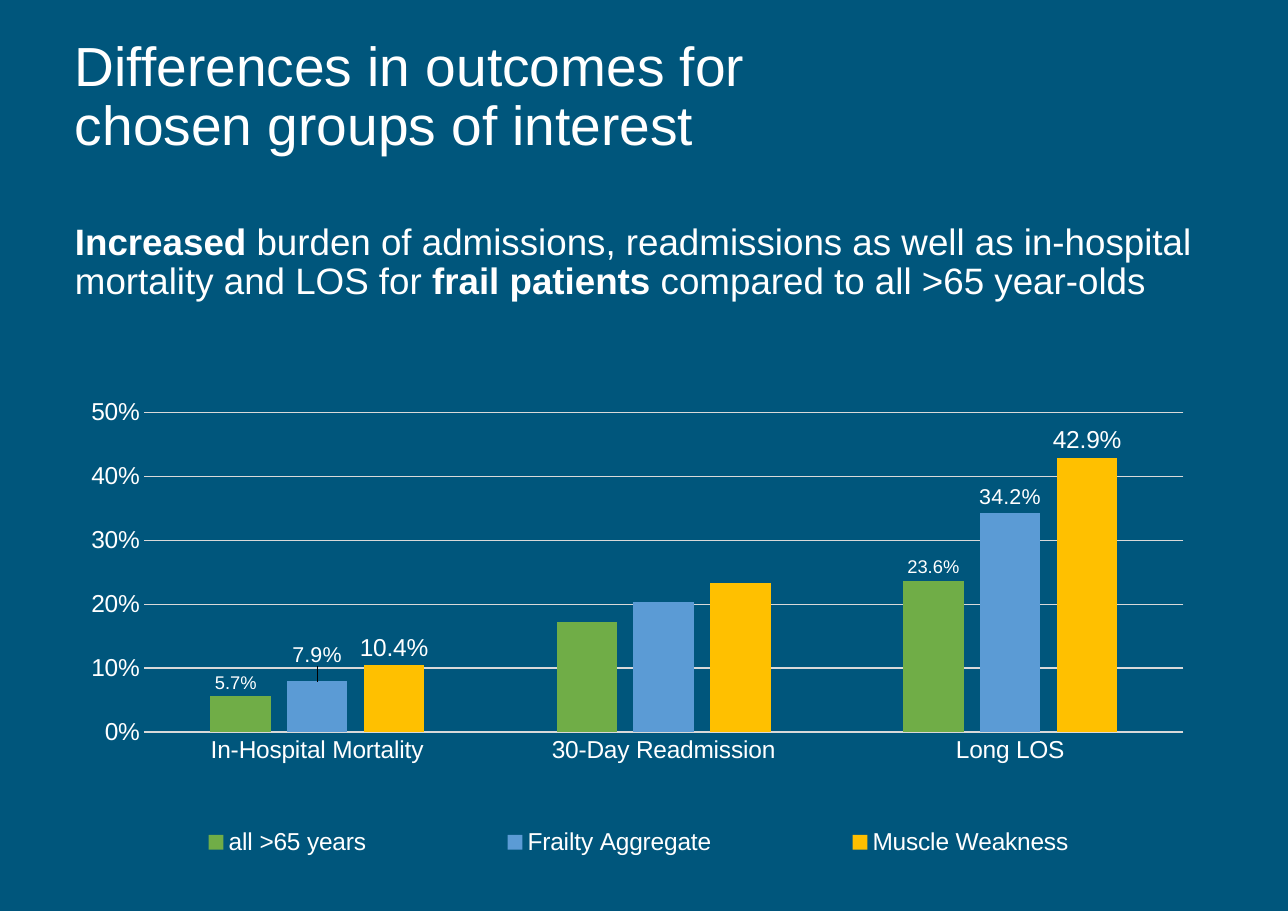
from copy import deepcopy

from lxml import etree
from pptx import Presentation
from pptx.chart.data import CategoryChartData
from pptx.dml.color import RGBColor
from pptx.enum import chart as ch, text as tx
from pptx.oxml import ns
from pptx.util import Pt

NAVY = RGBColor(0x00, 0x56, 0x7C)
WHITE = RGBColor(0xFF, 0xFF, 0xFF)
GREY = RGBColor(0xD9, 0xD9, 0xD9)
GREEN = RGBColor(0x70, 0xAD, 0x47)
BLUE = RGBColor(0x5B, 0x9B, 0xD5)
AMBER = RGBColor(0xFF, 0xC0, 0x00)
FONT = "Arial"

# Content: runs are (text, bold)
TITLE = [("Differences in outcomes for chosen groups of interest", False)]
MESSAGE = [
    ("Increased", True),
    (" burden of admissions, readmissions as well as in-hospital mortality and LOS for ", False),
    ("frail patients ", True),
    ("compared to all >65 year-olds", False),
]
OUTCOMES = ["In-Hospital Mortality", "30-Day Readmission", "Long LOS"]
# name, values, colour, label size, shift of the first label (share of chart)
GROUPS = [
    ("all >65 years", (0.057, 0.172, 0.236), GREEN, 12, (-0.004, 0.004)),
    ("Frailty Aggregate", (0.079, 0.203, 0.342), BLUE, 14, (0, -0.02)),
    ("Muscle Weakness", (0.104, 0.233, 0.429), AMBER, 16, None),
]
UNLABELLED = 1  # the readmission bars carry no value

# Places in points: left, top, width, height
PAGE = (841.68, 595.44)
TITLE_AT = (41.76, 21.6, 556.56, 76.32)
MESSAGE_AT = (41.76, 142.56, 757.44, 97.92)
CHART_AT = (41.76, 240.48, 747.36, 333.36)
# Places as shares of the chart
PLOT_AT = (0.07, 0.087, 0.909, 0.627)
LEGEND_AT = (0.01, 0.88, 0.985, 0.1)


def style_font(font, size):
    font.name, font.size = FONT, Pt(size)
    font.color.rgb = WHITE


def fill_placeholder(box, place, runs, size):
    box.left, box.top, box.width, box.height = map(Pt, place)
    frame = box.text_frame
    frame.word_wrap = True
    frame.auto_size = tx.MSO_AUTO_SIZE.NONE
    frame.vertical_anchor = tx.MSO_ANCHOR.TOP
    para = frame.paragraphs[0]
    props = para._p.get_or_add_pPr()
    props.set("marL", "0")
    props.set("indent", "0")
    etree.SubElement(props, ns.qn("a:buNone"))
    para.alignment = tx.PP_ALIGN.LEFT
    para.line_spacing = 0.9
    para.space_before = Pt(0)
    for words, bold in runs:
        span = para.add_run()
        span.text = words
        span.font.bold = bold
        style_font(span.font, size)


def chart_tag(parent, name, value=None):
    tag = etree.SubElement(parent, ns.qn("c:" + name))
    if value is not None:
        tag.set("val", str(value))
    return tag


def manual_layout(place, inner=False, absolute=True):
    layout = etree.Element(ns.qn("c:layout"))
    manual = chart_tag(layout, "manualLayout")
    if inner:
        chart_tag(manual, "layoutTarget", "inner")
    if absolute:
        chart_tag(manual, "xMode", "edge")
        chart_tag(manual, "yMode", "edge")
    for name, value in zip("xywh", place):
        chart_tag(manual, name, value)
    return layout


def replace_layout(parent, layout, position):
    for old in parent.findall(ns.qn("c:layout")):
        parent.remove(old)
    parent.insert(position, layout)


def label_series(series, size, shift):
    labels = series.data_labels
    labels.show_value = True
    labels.number_format, labels.number_format_is_linked = "0.0%", False
    labels.position = ch.XL_LABEL_POSITION.OUTSIDE_END
    style_font(labels.font, size)
    root = labels._element
    shared = [deepcopy(part) for part in root]
    hidden = etree.Element(ns.qn("c:dLbl"))
    chart_tag(hidden, "idx", UNLABELLED)
    chart_tag(hidden, "delete", 1)
    root.insert(0, hidden)
    if shift:
        moved = etree.Element(ns.qn("c:dLbl"))
        chart_tag(moved, "idx", 0)
        moved.append(manual_layout(shift, absolute=False))
        moved.extend(part for part in shared if part.tag != ns.qn("c:showLeaderLines"))
        root.insert(0, moved)


def add_outcome_chart(page):
    data = CategoryChartData(number_format="0.0%")
    data.categories = OUTCOMES
    for name, values, *_ in GROUPS:
        data.add_series(name, values)
    chart = page.shapes.add_chart(
        ch.XL_CHART_TYPE.COLUMN_CLUSTERED, *map(Pt, CHART_AT), data).chart
    chart.has_title = False
    style_font(chart.font, 16)

    # Columns and their values
    plot = chart.plots[0]
    plot.gap_width, plot.overlap = 219, -27
    plot.vary_by_categories = False
    for series, (_, _, colour, size, shift) in zip(plot.series, GROUPS):
        series.format.fill.solid()
        series.format.fill.fore_color.rgb = colour
        label_series(series, size, shift)

    # Axes
    scale = chart.value_axis
    scale.minimum_scale, scale.maximum_scale, scale.major_unit = 0, 0.5, 0.1
    scale.tick_labels.number_format = "0%"
    scale.tick_labels.number_format_is_linked = False
    scale.format.line.fill.background()
    scale.has_major_gridlines = True
    for axis in (scale, chart.category_axis):
        axis.major_tick_mark = axis.minor_tick_mark = ch.XL_TICK_MARK.NONE
        style_font(axis.tick_labels.font, 16)
    for line in (scale.major_gridlines.format.line, chart.category_axis.format.line):
        line.color.rgb, line.width = GREY, Pt(0.75)

    # Legend and layout
    chart.has_legend = True
    legend = chart.legend
    legend.position = ch.XL_LEGEND_POSITION.BOTTOM
    legend.include_in_layout = False
    style_font(legend.font, 16)
    replace_layout(legend._element, manual_layout(LEGEND_AT), 1)
    area = chart._chartSpace.find(".//" + ns.qn("c:plotArea"))
    replace_layout(area, manual_layout(PLOT_AT, inner=True), 0)


def main():
    deck = Presentation()
    deck.slide_width, deck.slide_height = map(Pt, PAGE)
    page = deck.slides.add_slide(deck.slide_layouts[1])
    page.background.fill.solid()
    page.background.fill.fore_color.rgb = NAVY
    fill_placeholder(page.shapes.title, TITLE_AT, TITLE, 36)
    fill_placeholder(page.placeholders[1], MESSAGE_AT, MESSAGE, 24)
    add_outcome_chart(page)
    deck.save("out.pptx")


if __name__ == "__main__":
    main()
